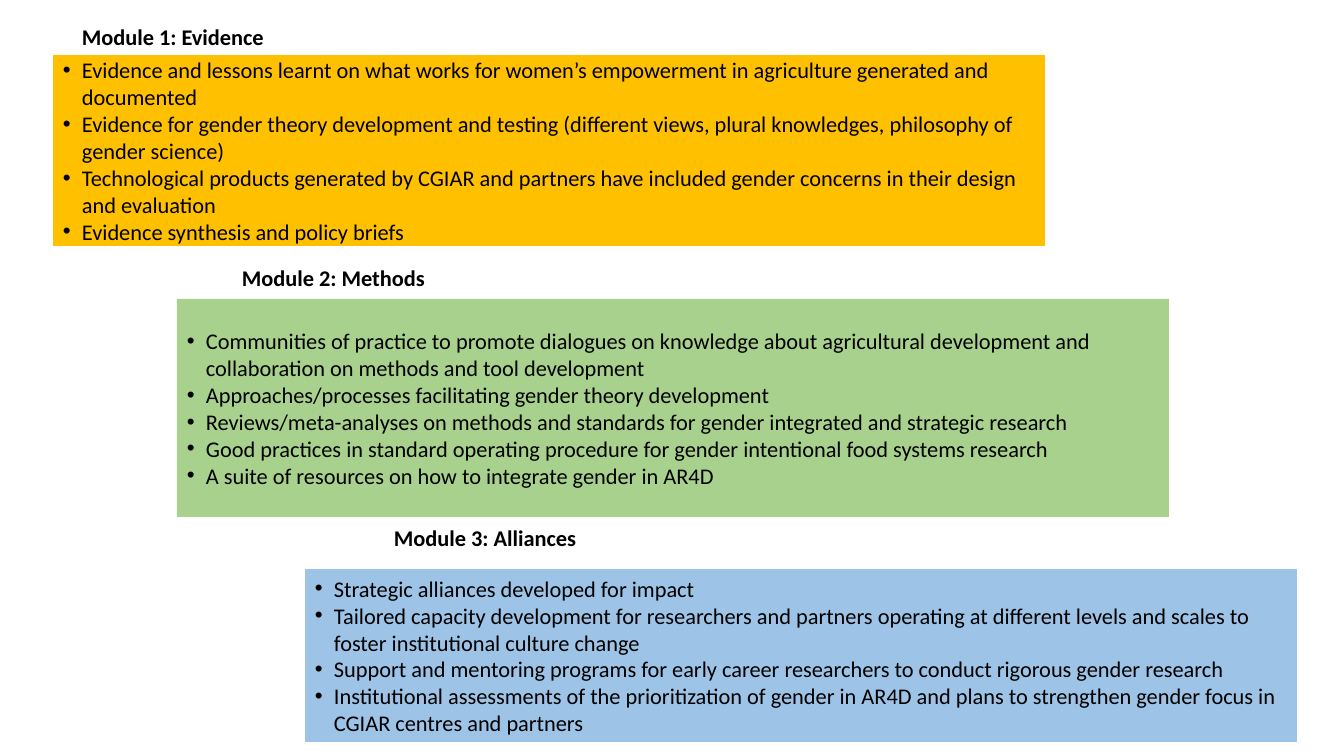
import pptx
import pptx.dml.color
import pptx.enum.shapes
import pptx.enum.text
import pptx.oxml
import pptx.oxml.ns
import pptx.util

PX = 914400 / 100.8
WIDE, HIGH = 1344, 756
BOX_W, HEAD_H = 992, 37
INDENT = 19

# heading, its (left, top, width), box (left, top, height), fill, points
MODULES = [
    ("Module 1: Evidence", (72, 18, 307), (53, 55, 191), "FFC000", [
        "Evidence and lessons learnt on what works for women’s empowerment in agriculture generated and documented",
        "Evidence for gender theory development and testing (different views, plural knowledges, philosophy of gender science)",
        "Technological products generated by CGIAR and partners have included gender concerns in their design and evaluation",
        "Evidence synthesis and policy briefs",
    ]),
    ("Module 2: Methods", (232, 259, 253), (177, 299, 218), "A9D18E", [
        "Communities of practice to promote dialogues on knowledge about agricultural development and collaboration on methods and tool development",
        "Approaches/processes facilitating gender theory development",
        "Reviews/meta-analyses on methods and standards for gender integrated and strategic research",
        "Good practices in standard operating procedure for gender intentional food systems research",
        "A suite of resources on how to integrate gender in AR4D",
    ]),
    ("Module 3: Alliances", (384, 519, 362), (305, 569, 173), "9DC3E6", [
        "Strategic alliances developed for impact",
        "Tailored capacity development for researchers and partners operating at different levels and scales to foster institutional culture change",
        "Support and mentoring programs for early career researchers to conduct rigorous gender research",
        "Institutional assessments of the prioritization of gender in AR4D and plans to strengthen gender focus in CGIAR centres and partners",
    ]),
]


def px(n):
    return pptx.util.Emu(round(n * PX))


def color(code):
    return pptx.dml.color.RGBColor.from_string(code)


def assign(item, values):
    for name, value in values.items():
        setattr(item, name, value)


class Page:
    """Holds the text style and the slide being drawn."""

    def __init__(self, slide):
        self.slide = slide
        self.ink = color("000000")
        self.font = {"name": "Calibri", "size": pptx.util.Pt(16)}

    def style(self, para, bold=False):
        assign(para.font, {**self.font, "bold": bold})
        para.font.color.rgb = self.ink

    def bullet(self, para):
        props = para._p.get_or_add_pPr()
        props.set("marL", str(px(INDENT)))
        props.set("indent", str(px(-INDENT)))
        space = pptx.oxml.ns.nsdecls("a")
        for tag in ('buFont %s typeface="Arial"', 'buChar %s char="•"'):
            props.append(pptx.oxml.parse_xml(f"<a:{tag % space}/>"))

    def heading(self, text, left, top, width):
        box = self.slide.shapes.add_textbox(*map(px, (left, top, width, HEAD_H)))
        frame = box.text_frame
        frame.word_wrap = True
        frame.auto_size = pptx.enum.text.MSO_AUTO_SIZE.SHAPE_TO_FIT_TEXT
        frame.text = text
        self.style(frame.paragraphs[0], bold=True)

    def panel(self, points, fill, left, top, height):
        """Draw a filled box with a bulleted list."""
        box = self.slide.shapes.add_shape(
            pptx.enum.shapes.MSO_SHAPE.RECTANGLE,
            *map(px, (left, top, BOX_W, height)))
        box.shadow.inherit = False
        box.fill.solid()
        box.fill.fore_color.rgb = color(fill)
        box.line.fill.background()
        frame = box.text_frame
        assign(frame, {"word_wrap": True,
                       "vertical_anchor": pptx.enum.text.MSO_ANCHOR.MIDDLE})
        frame.text = "\n".join(points)
        for para in frame.paragraphs:
            para.alignment = pptx.enum.text.PP_ALIGN.LEFT
            self.bullet(para)
            self.style(para)


def main():
    deck = pptx.Presentation()
    assign(deck, {"slide_width": px(WIDE), "slide_height": px(HIGH)})
    page = Page(deck.slides.add_slide(deck.slide_layouts[6]))
    for title, head, box, fill, points in MODULES:
        page.panel(points, fill, *box)
        page.heading(title, *head)
    deck.save("out.pptx")


if __name__ == "__main__":
    main()
